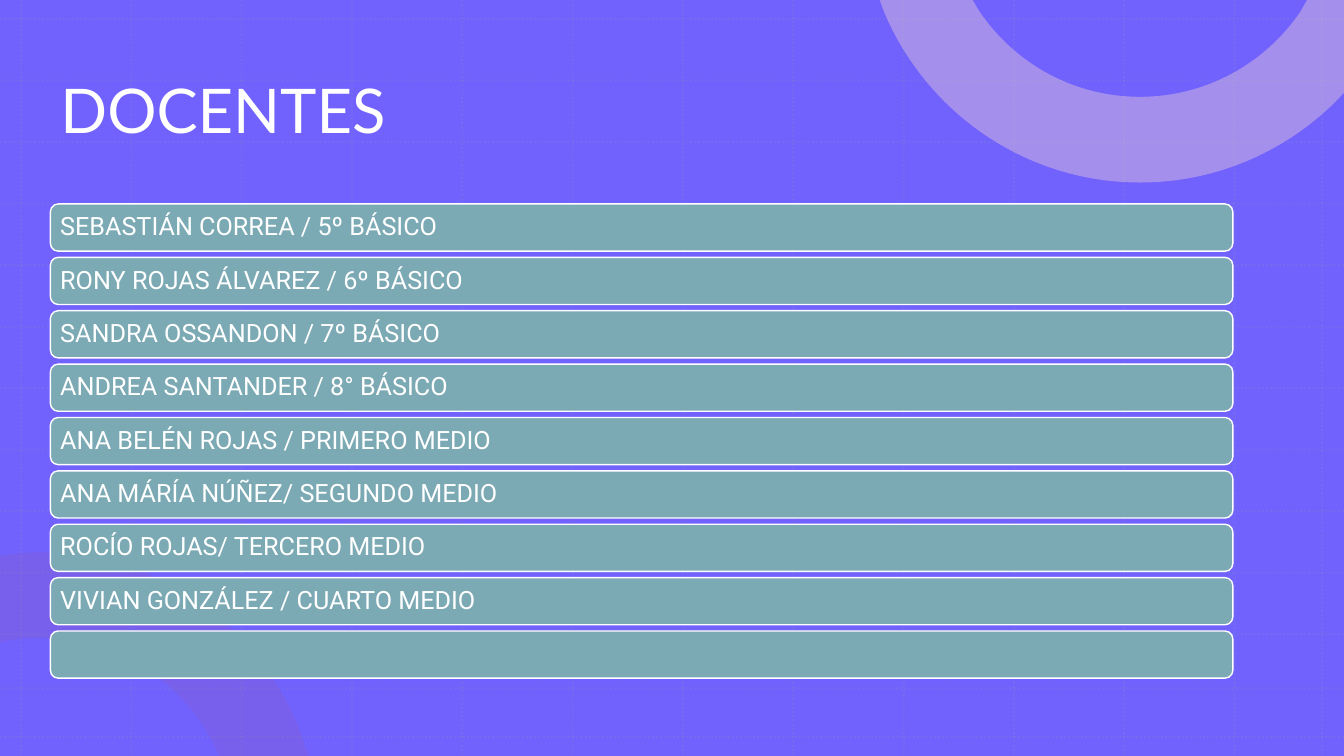
from lxml.etree import SubElement
from pptx import Presentation
from pptx.dml.color import RGBColor
from pptx.enum.dml import MSO_LINE
from pptx.enum.shapes import MSO_CONNECTOR, MSO_SHAPE
from pptx.enum.text import MSO_ANCHOR, PP_ALIGN
from pptx.oxml.ns import qn
from pptx.util import Cm, Pt

COLORS = {
    "background": "7162FE",
    "grid": "7F96BA",
    "lower_ring": "9C5CA7",
    "upper_ring": "D8BFDC",
    "bar": "7BA9B4",
    "white": "FFFFFF",
}
WIDTH, HEIGHT = 33.87, 19.05
FIRST_BAR_TOP, LAST_BAR_TOP = 5.14, 15.9
TEACHERS = [
    "SEBASTIÁN CORREA / 5º BÁSICO",
    "RONY ROJAS ÁLVAREZ / 6º BÁSICO",
    "SANDRA OSSANDON / 7º BÁSICO",
    "ANDREA SANTANDER / 8° BÁSICO",
    "ANA BELÉN ROJAS / PRIMERO MEDIO",
    "ANA MÁRÍA NÚÑEZ/ SEGUNDO MEDIO",
    "ROCÍO ROJAS/ TERCERO MEDIO",
    "VIVIAN GONZÁLEZ / CUARTO MEDIO",
    "",
]
LOWER_RING = [
    [(1.02, 13.92)],
    [(4.17, 13.92), (6.83, 16), (7.7, 18.85)],
    [(7.77, 19.05)],
    [(5.51, 19.05)],
    [(5.51, 19.02)],
    [(4.78, 17.3), (3.05, 16.08), (1.02, 16.08)],
    [(0.69, 16.08), (0.36, 16.1), (0.05, 16.18)],
    [(-0.03, 16.18)],
    [(-0.03, 14.02)],
    [(0.3, 13.97)],
    [(0.53, 13.94), (0.79, 13.92), (1.02, 13.92)],
]
UPPER_RING = [
    [(22.17, 0)],
    [(24.51, 0)],
    [(24.69, 0.3)],
    [(25.58, 1.6), (27.05, 2.44), (28.73, 2.44)],
    [(30.4, 2.44), (31.88, 1.6), (32.77, 0.3)],
    [(32.94, 0)],
    [(WIDTH, 0)],
    [(WIDTH, 2.34)],
    [(33.68, 2.54)],
    [(32.41, 3.81), (30.66, 4.6), (28.73, 4.6)],
    [(25.83, 4.6), (23.34, 2.82), (22.28, 0.3)],
]


def set_opacity(shape, percent):
    for color in shape.element.iter(qn("a:srgbClr")):
        SubElement(color, qn("a:alpha")).set("val", str(percent * 1000))


def format_paragraph(paragraph, font_name, size):
    paragraph.alignment = PP_ALIGN.LEFT
    paragraph.line_spacing = 0.9
    paragraph.font.name = font_name
    paragraph.font.size = Pt(size)
    paragraph.font.color.rgb = RGBColor.from_string(COLORS["white"])


presentation = Presentation()
presentation.slide_width = Cm(WIDTH)
presentation.slide_height = Cm(HEIGHT)
slide = presentation.slides.add_slide(presentation.slide_layouts[5])

backdrop = slide.shapes.add_shape(MSO_SHAPE.RECTANGLE, 0, 0, Cm(WIDTH), Cm(HEIGHT))
backdrop.shadow.inherit = False
backdrop.fill.solid()
backdrop.fill.fore_color.rgb = RGBColor.from_string(COLORS["background"])
backdrop.line.fill.background()
decorations = [backdrop]

columns = [0.53 + 2.78 * index for index in range(12)] + [33.32]
rows = [0.48 + 1.55 * index for index in range(11)] + [17.35, 18.57]
grid_lines = [(x, 0, x, HEIGHT) for x in columns] + [(0, y, WIDTH, y) for y in rows]
for grid_line in grid_lines:
    connector = slide.shapes.add_connector(MSO_CONNECTOR.STRAIGHT, *map(Cm, grid_line))
    connector.line.color.rgb = RGBColor.from_string(COLORS["grid"])
    connector.line.width = Pt(1.5)
    connector.line.dash_style = MSO_LINE.ROUND_DOT
    set_opacity(connector, 20)
    SubElement(connector.element.spPr, qn("a:effectLst"))
    decorations.append(connector)

for color_name, opacity, segments in [("lower_ring", 20, LOWER_RING), ("upper_ring", 50, UPPER_RING)]:
    points = [(Cm(x), Cm(y)) for segment in segments for x, y in segment]
    builder = slide.shapes.build_freeform(*points[0])
    builder.add_line_segments(points[1:], close=True)
    ring = builder.convert_to_shape()
    ring.shadow.inherit = False
    ring.fill.solid()
    ring.fill.fore_color.rgb = RGBColor.from_string(COLORS[color_name])
    ring.line.fill.background()
    set_opacity(ring, opacity)
    steps = iter(list(ring.element.iter(qn("a:lnTo"))))
    for segment in segments[1:]:
        curve = next(steps)
        if len(segment) == 3:
            curve.tag = qn("a:cubicBezTo")
            for extra in (next(steps), next(steps)):
                curve.append(extra[0])
                extra.getparent().remove(extra)
    decorations.append(ring)

master_tree = presentation.slide_master.placeholders[0].element.getparent()
for index, decoration in enumerate(decorations):
    next(decoration.element.iter(qn("p:cNvPr"))).set("id", str(100 + index))
    master_tree.insert(2 + index, decoration.element)

title = slide.shapes.title
title.left, title.top, title.width, title.height = Cm(1.27), Cm(1.01), Cm(29.8), Cm(3.68)
title.text_frame.text = "DOCENTES"
title.text_frame.vertical_anchor = MSO_ANCHOR.MIDDLE
format_paragraph(title.text_frame.paragraphs[0], "Lato", 44)

bar_pitch = (LAST_BAR_TOP - FIRST_BAR_TOP) / (len(TEACHERS) - 1)
for index, teacher in enumerate(TEACHERS):
    bar_top = FIRST_BAR_TOP + bar_pitch * index
    bar = slide.shapes.add_shape(
        MSO_SHAPE.ROUNDED_RECTANGLE, Cm(1.27), Cm(bar_top), Cm(29.8), Cm(1.19)
    )
    bar.shadow.inherit = False
    bar.fill.solid()
    bar.fill.fore_color.rgb = RGBColor.from_string(COLORS["bar"])
    bar.line.color.rgb = RGBColor.from_string(COLORS["white"])
    bar.line.width = Pt(1)
    if teacher:
        frame = bar.text_frame
        frame.margin_left = frame.margin_right = Cm(0.19)
        frame.margin_top = frame.margin_bottom = Cm(0.19)
        frame.vertical_anchor = MSO_ANCHOR.MIDDLE
        frame.text = teacher
        format_paragraph(frame.paragraphs[0], "Roboto", 18)

presentation.save("out.pptx")
